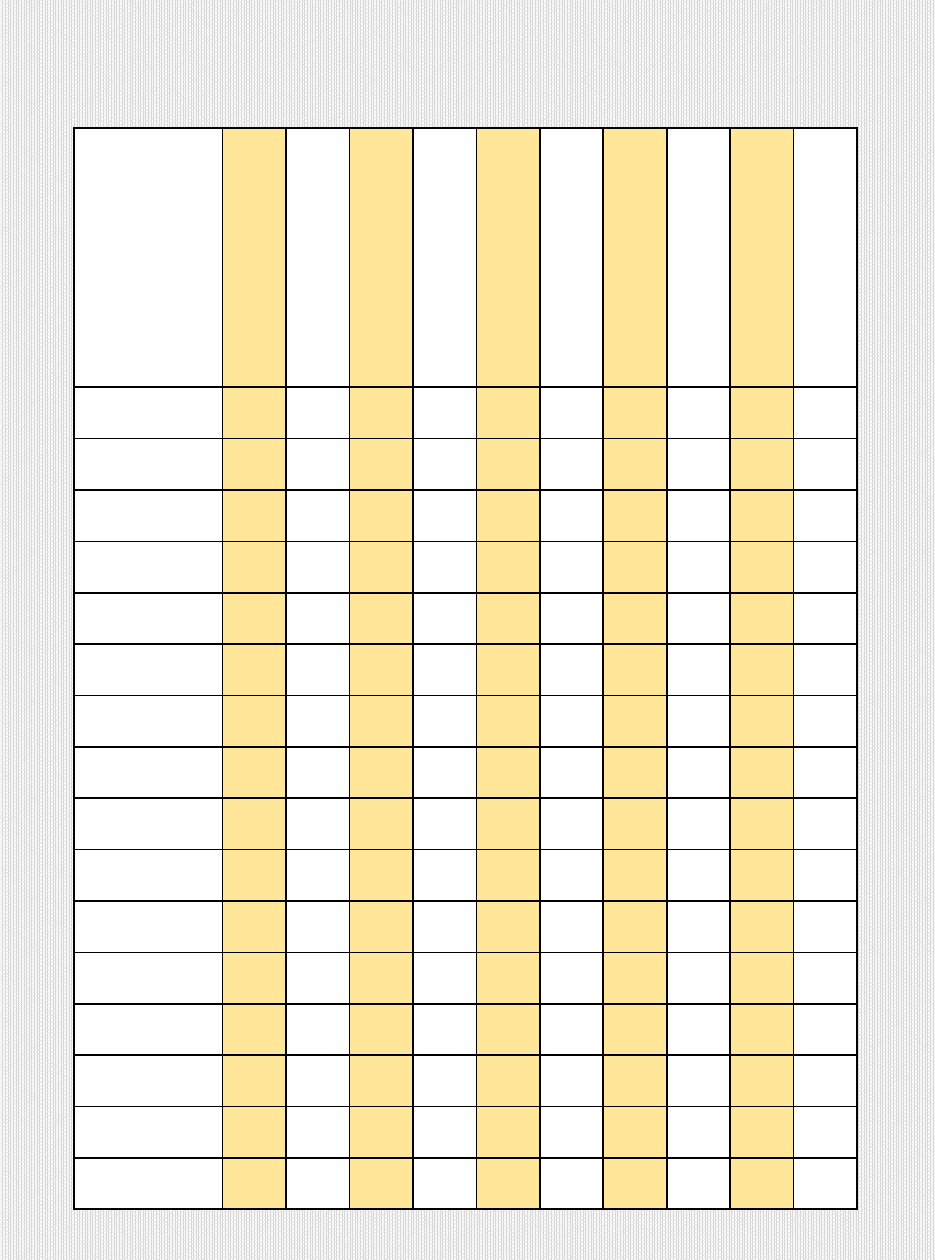
import pptx
import pptx.dml.color
import pptx.enum.dml
import pptx.oxml
import pptx.oxml.ns
import pptx.util

Inches = pptx.util.Inches
RGBColor = pptx.dml.color.RGBColor

WHITE = RGBColor(0xFF, 0xFF, 0xFF)
GREY = RGBColor(0xD9, 0xD9, 0xD9)
GOLD = RGBColor(0xFF, 0xE6, 0x99)
BLACK = RGBColor(0x00, 0x00, 0x00)

ROWS, COLS = 17, 11
WIDTH, HEIGHT = 5.7, 7.88
NAME_COL, HEAD_ROW = 1.08, 1.89


def add_border(cell, color, points):
    """Draw a solid line on all four sides of a cell."""
    props = cell._tc.get_or_add_tcPr()
    for i, side in enumerate(("lnL", "lnR", "lnT", "lnB")):
        line = pptx.oxml.parse_xml(
            f'<a:{side} {pptx.oxml.ns.nsdecls("a")} w="{pptx.util.Pt(points)}">'
            f'<a:solidFill><a:srgbClr val="{color}"/></a:solidFill></a:{side}>')
        props.insert(i, line)


# Slide of 490 by 660.5 points
deck = pptx.Presentation()
deck.slide_width, deck.slide_height = Inches(490 / 72), Inches(660.5 / 72)
slide = deck.slides.add_slide(deck.slide_layouts[6])

# Patterned background
back = slide.background.fill
back.patterned()
back.pattern = pptx.enum.dml.MSO_PATTERN.PERCENT_90
back.fore_color.rgb = GREY
back.back_color.rgb = WHITE

# Grid: wide name column, tall heading row, the rest shared equally
grid = slide.shapes.add_table(ROWS, COLS, Inches(0.54), Inches(0.93),
                              Inches(WIDTH), Inches(HEIGHT)).table
for c, col in enumerate(grid.columns):
    col.width = Inches((WIDTH - NAME_COL) / (COLS - 1) if c else NAME_COL)
for r, row in enumerate(grid.rows):
    row.height = Inches((HEIGHT - HEAD_ROW) / (ROWS - 1) if r else HEAD_ROW)

    # Alternate column colours
    for c, cell in enumerate(row.cells):
        cell.margin_top = cell.margin_bottom = 0
        cell.fill.solid()
        cell.fill.fore_color.rgb = GOLD if c % 2 else WHITE
        add_border(cell, BLACK, 1)

deck.save("out.pptx")
